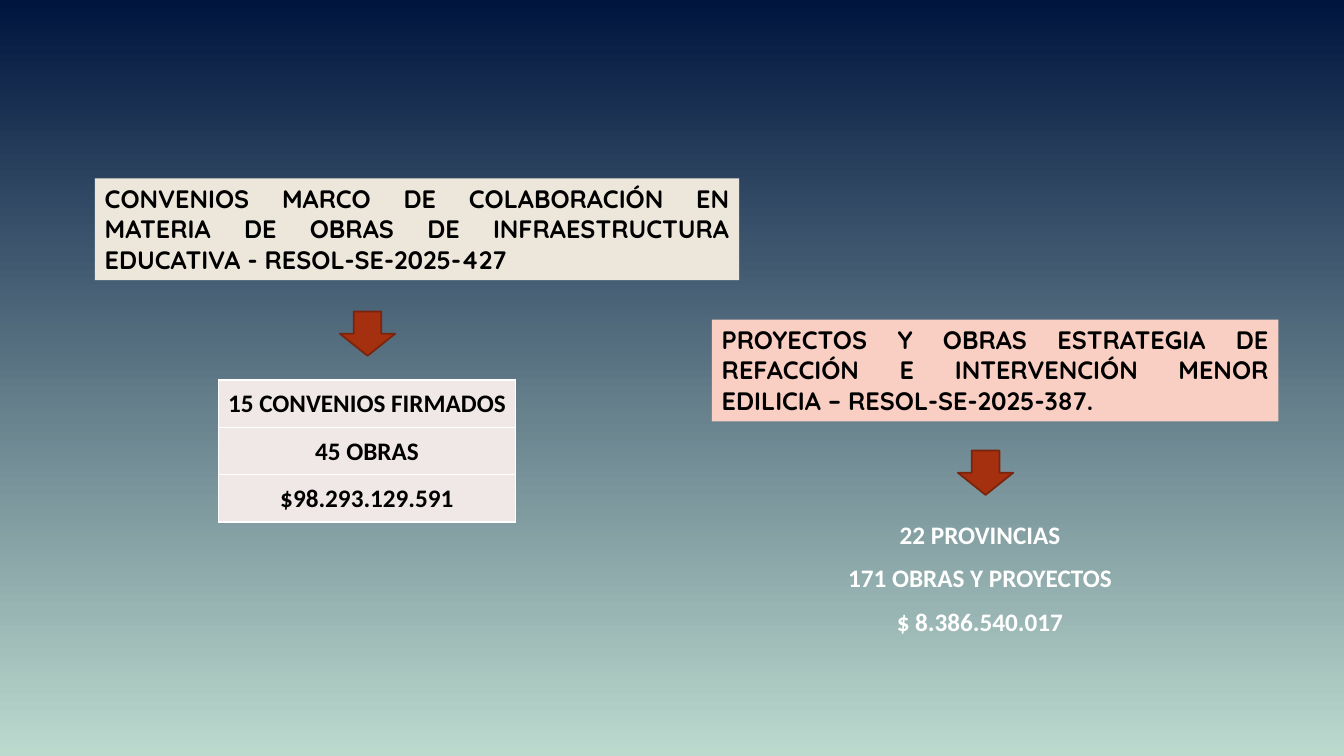
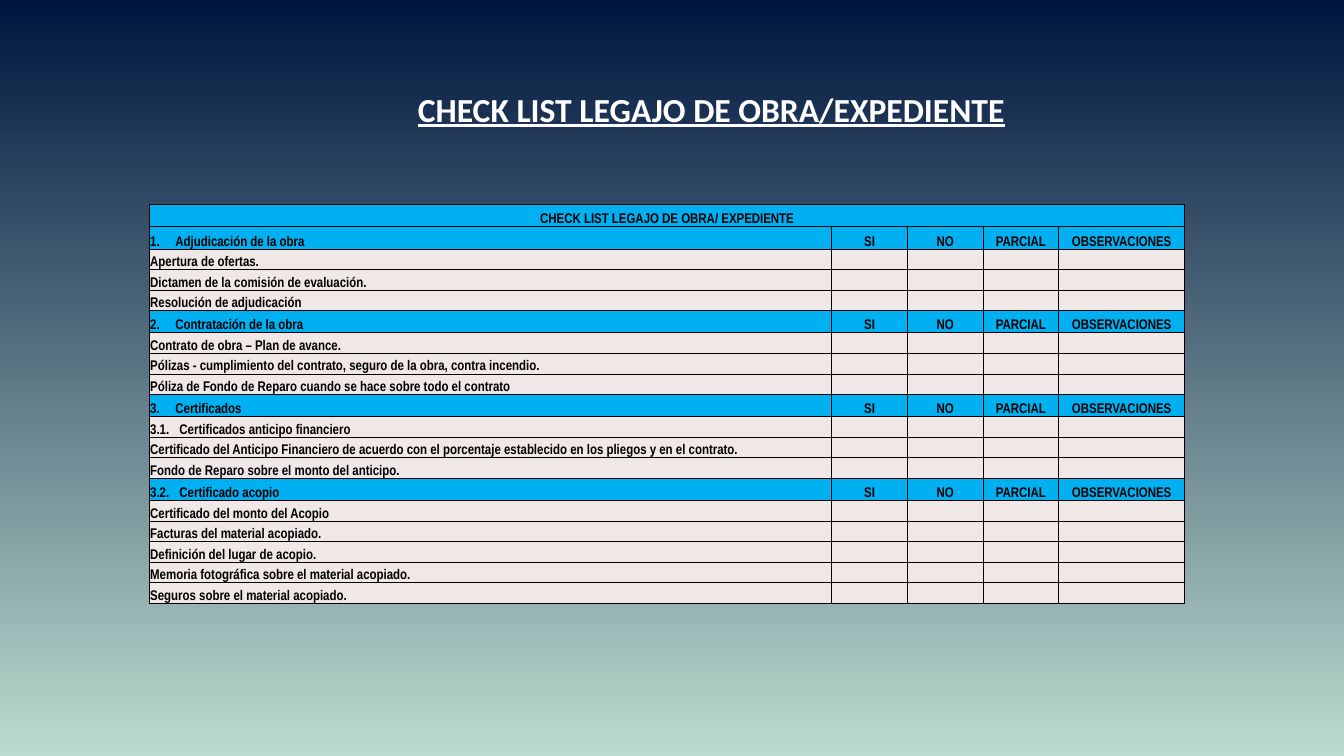
"""Build two slides on school works: signed agreements and the works file check list."""
from dataclasses import dataclass
from typing import Any

import lxml.etree
import pptx
import pptx.dml.color
import pptx.enum.shapes
import pptx.enum.text
import pptx.oxml.ns
import pptx.presentation
import pptx.slide
import pptx.table
import pptx.text.text
import pptx.util

Inches = pptx.util.Inches
Pt = pptx.util.Pt
Align = pptx.enum.text.PP_ALIGN
Anchor = pptx.enum.text.MSO_ANCHOR
Preset = pptx.enum.shapes.MSO_SHAPE
qn = pptx.oxml.ns.qn


@dataclass(frozen=True)
class Theme:
    """Colours, fonts and type sizes of the deck."""
    sky_top: str = "00153E"
    sky_bottom: str = "BCDACE"
    sand: str = "EDE6DB"
    rose: str = "F9CFC3"
    rust: str = "A53010"
    rust_edge: str = "7A240C"
    section: str = "00B0F0"
    cell: str = "F0E8E7"
    black: str = "000000"
    white: str = "FFFFFF"
    heading_font: str = "Quicksand"
    body_font: str = "Calibri"
    list_font: str = "Arial Narrow"
    title_size: int = 24
    body_size: int = 18
    list_size: int = 10


THEME = Theme()


@dataclass(frozen=True)
class Box:
    """Place and size in inches."""
    left: float
    top: float
    width: float
    height: float

    def lengths(self) -> tuple[int, ...]:
        """Return left, top, width and height as lengths."""
        return tuple(Inches(v) for v in (self.left, self.top, self.width, self.height))


@dataclass(frozen=True)
class TextStyle:
    """Font and paragraph format of a text."""
    font: str
    size: int
    color: str
    align: Any
    underline: bool = False
    spaced: bool = False


@dataclass(frozen=True)
class Programme:
    """A programme heading with the arrow below it."""
    heading: str
    fill: str
    box: Box
    arrow: Box


@dataclass(frozen=True)
class Section:
    """A check list section: number, heading and rows."""
    number: str
    heading: str
    items: tuple[str, ...]


HEADING = TextStyle(THEME.heading_font, THEME.body_size, THEME.black, Align.JUSTIFY)
FIGURE = TextStyle(THEME.body_font, THEME.body_size, THEME.black, Align.CENTER)
SUMMARY = TextStyle(THEME.body_font, THEME.body_size, THEME.white, Align.CENTER, spaced=True)
TITLE = TextStyle(THEME.body_font, THEME.title_size, THEME.white, Align.CENTER, True, True)
ITEM = TextStyle(THEME.list_font, THEME.list_size, THEME.black, Align.LEFT)
ANSWER = TextStyle(THEME.list_font, THEME.list_size, THEME.black, Align.CENTER)

PROGRAMMES = (
    Programme("CONVENIOS MARCO DE COLABORACIÓN EN MATERIA DE OBRAS DE INFRAESTRUCTURA "
              "EDUCATIVA - RESOL-SE-2025-427", THEME.sand,
              Box(0.94, 1.77, 6.39, 1.01), Box(3.37, 3.09, 0.55, 0.44)),
    Programme("PROYECTOS Y OBRAS ESTRATEGIA DE REFACCIÓN E INTERVENCIÓN MENOR EDILICIA "
              "– RESOL-SE-2025-387.", THEME.rose,
              Box(7.06, 3.17, 5.62, 1.01), Box(9.5, 4.47, 0.55, 0.44)),
)
AGREEMENTS = ("15 CONVENIOS FIRMADOS", "45 OBRAS", "$98.293.129.591")
WORKS = ("22 PROVINCIAS", "171 OBRAS Y PROYECTOS", "$ 8.386.540.017")

ANSWERS = ("SI", "NO", "PARCIAL", "OBSERVACIONES")
SECTIONS = (
    Section("1.", "Adjudicación de la obra", (
        "Apertura de ofertas.",
        "Dictamen de la comisión de evaluación.",
        "Resolución de adjudicación")),
    Section("2.", "Contratación de la obra", (
        "Contrato de obra – Plan de avance.",
        "Pólizas - cumplimiento del contrato, seguro de la obra, contra incendio.",
        "Póliza de Fondo de Reparo cuando se hace sobre todo el contrato")),
    Section("3.", "Certificados", (
        "3.1.\tCertificados anticipo financiero",
        "Certificado del Anticipo Financiero de acuerdo con el porcentaje establecido "
        "en los pliegos y en el contrato.",
        "Fondo de Reparo sobre el monto del anticipo.")),
    Section("3.2.", "Certificado acopio", (
        "Certificado del monto del Acopio",
        "Facturas del material acopiado.",
        "Definición del lugar de acopio.",
        "Memoria fotográfica sobre el material acopiado.",
        "Seguros sobre el material acopiado.")),
)


def rgb(color: str) -> pptx.dml.color.RGBColor:
    """Turn a hex string into a colour."""
    return pptx.dml.color.RGBColor.from_string(color)


def apply(target: Any, formats: dict[str, Any]) -> None:
    """Set each format value on the target."""
    for name, value in formats.items():
        setattr(target, name, value)


def write(frame: pptx.text.text.TextFrame, lines: tuple[str, ...], style: TextStyle) -> None:
    """Write one styled paragraph per line."""
    for index, line in enumerate(lines):
        paragraph = frame.add_paragraph() if index else frame.paragraphs[0]
        paragraph.alignment = style.align
        if style.spaced:
            apply(paragraph, {"line_spacing": 1.07, "space_after": Pt(8)})
        if not line:
            lxml.etree.SubElement(paragraph._p, qn("a:endParaRPr"), sz=str(style.size * 100))
            continue
        if "\t" in line:
            number = line.split("\t")[0]
            indent = Inches(0.25 if len(number) < 3 else 0.29)
            properties = paragraph._p.get_or_add_pPr()
            properties.set("marL", str(indent))
            properties.set("indent", str(-indent))
        run = paragraph.add_run()
        run.text = line
        apply(run.font, {"name": style.font, "size": Pt(style.size), "bold": True,
                         "underline": style.underline})
        run.font.color.rgb = rgb(style.color)


def fit(frame: pptx.text.text.TextFrame) -> None:
    """Wrap text from the top of a shape that grows with it."""
    apply(frame, {"word_wrap": True, "vertical_anchor": Anchor.TOP,
                  "auto_size": pptx.enum.text.MSO_AUTO_SIZE.SHAPE_TO_FIT_TEXT})


def add_block(slide: pptx.slide.Slide, preset: Any, box: Box, fill: str, edge: str = "") -> Any:
    """Add a flat filled shape, outlined when an edge colour is given."""
    block = slide.shapes.add_shape(preset, *box.lengths())
    block.shadow.inherit = False
    block.fill.solid()
    block.fill.fore_color.rgb = rgb(fill)
    if edge:
        block.line.color.rgb = rgb(edge)
        block.line.width = Pt(1.25)
    else:
        block.line.fill.background()
    return block


def add_grid(slide: pptx.slide.Slide, box: Box, widths: tuple[float, ...],
             heights: tuple[float, ...]) -> pptx.table.Table:
    """Add a plain table with the given columns and rows."""
    grid = slide.shapes.add_table(len(heights), len(widths), *box.lengths()).table
    apply(grid, {"first_row": False, "horz_banding": False})
    for column, width in zip(grid.columns, widths):
        column.width = Inches(width)
    for row, height in zip(grid.rows, heights):
        row.height = Inches(height)
    return grid


def fill_cell(cell: Any, text: str, style: TextStyle, fill: str, anchor: Any,
              edge: str, borders: dict[str, float]) -> None:
    """Write a cell and set its margins, borders and fill."""
    apply(cell, {"margin_left": Inches(0.01), "margin_right": Inches(0.01),
                 "margin_top": Inches(0.01), "margin_bottom": 0, "vertical_anchor": anchor})
    write(cell.text_frame, (text,), style)
    properties = cell._tc.get_or_add_tcPr()
    for side, width in borders.items():
        line = lxml.etree.SubElement(properties, qn(f"a:ln{side}"), w=str(Pt(width)))
        solid = lxml.etree.SubElement(line, qn("a:solidFill"))
        lxml.etree.SubElement(solid, qn("a:srgbClr"), val=edge)
    cell.fill.solid()
    cell.fill.fore_color.rgb = rgb(fill)


def build_programmes(deck: pptx.presentation.Presentation) -> None:
    """Build the slide with both programmes and their figures."""
    slide = deck.slides.add_slide(deck.slide_layouts[6])
    for programme in PROGRAMMES:
        heading = add_block(slide, Preset.RECTANGLE, programme.box, programme.fill)
        fit(heading.text_frame)
        write(heading.text_frame, (programme.heading,), HEADING)
        add_block(slide, Preset.DOWN_ARROW, programme.arrow, THEME.rust, THEME.rust_edge)
    works = slide.shapes.add_textbox(*Box(8.1, 5.08, 3.24, 1.3).lengths())
    fit(works.text_frame)
    write(works.text_frame, WORKS, SUMMARY)
    agreements = add_grid(slide, Box(2.17, 3.77, 2.94, 1.41), (2.94,), (0.47,) * len(AGREEMENTS))
    for row, figure in enumerate(AGREEMENTS):
        fill_cell(agreements.cell(row, 0), figure, FIGURE, THEME.cell, Anchor.MIDDLE,
                  THEME.white, dict.fromkeys("LRTB", 1))


def build_check_list(deck: pptx.presentation.Presentation) -> None:
    """Build the slide with the check list table."""
    slide = deck.slides.add_slide(deck.slide_layouts[5])
    title = slide.shapes.title
    apply(title, dict(zip(("left", "top", "width", "height"),
                          Box(3.5, 0.8, 7.11, 0.51).lengths())))
    fit(title.text_frame)
    write(title.text_frame, ("CHECK LIST LEGAJO DE OBRA/EXPEDIENTE",), TITLE)

    blanks = ("",) * len(ANSWERS)
    rows = [(True, ("CHECK LIST LEGAJO DE OBRA/ EXPEDIENTE", *blanks))]
    for section in SECTIONS:
        rows.append((True, (f"{section.number}\t{section.heading}", *ANSWERS)))
        rows.extend((False, (item, *blanks)) for item in section.items)

    box = Box(1.48, 2.03, 10.27, 3.96)
    widths = (6.77, 0.75, 0.75, 0.75, 1.25)
    header_count = sum(is_header for is_header, _ in rows)
    header_height = 0.22
    item_height = (box.height - header_count * header_height) / (len(rows) - header_count)
    heights = tuple(header_height if is_header else item_height for is_header, _ in rows)
    check_list = add_grid(slide, box, widths, heights)
    last = len(widths) - 1
    check_list.cell(0, 0).merge(check_list.cell(0, last))
    for row, (is_header, texts) in enumerate(rows):
        for column, text in enumerate(texts):
            heavy = {"L": column == 0, "R": column == last, "T": row <= 1, "B": row == 0}
            fill_cell(check_list.cell(row, column), text,
                      ANSWER if column or row == 0 else ITEM,
                      THEME.section if is_header else THEME.cell, Anchor.BOTTOM, THEME.black,
                      {side: 1 if thick else 0.5 for side, thick in heavy.items()})


def main() -> None:
    """Set up the shared background, build both slides and save."""
    deck = pptx.Presentation()
    apply(deck, {"slide_width": Inches(13.33), "slide_height": Inches(7.5)})
    sky = deck.slide_master.background.fill
    sky.gradient()
    sky.gradient_angle = 270
    for stop, color in zip(sky.gradient_stops, (THEME.sky_top, THEME.sky_bottom)):
        stop.color.rgb = rgb(color)
    build_programmes(deck)
    build_check_list(deck)
    deck.save("out.pptx")


if __name__ == "__main__":
    main()
